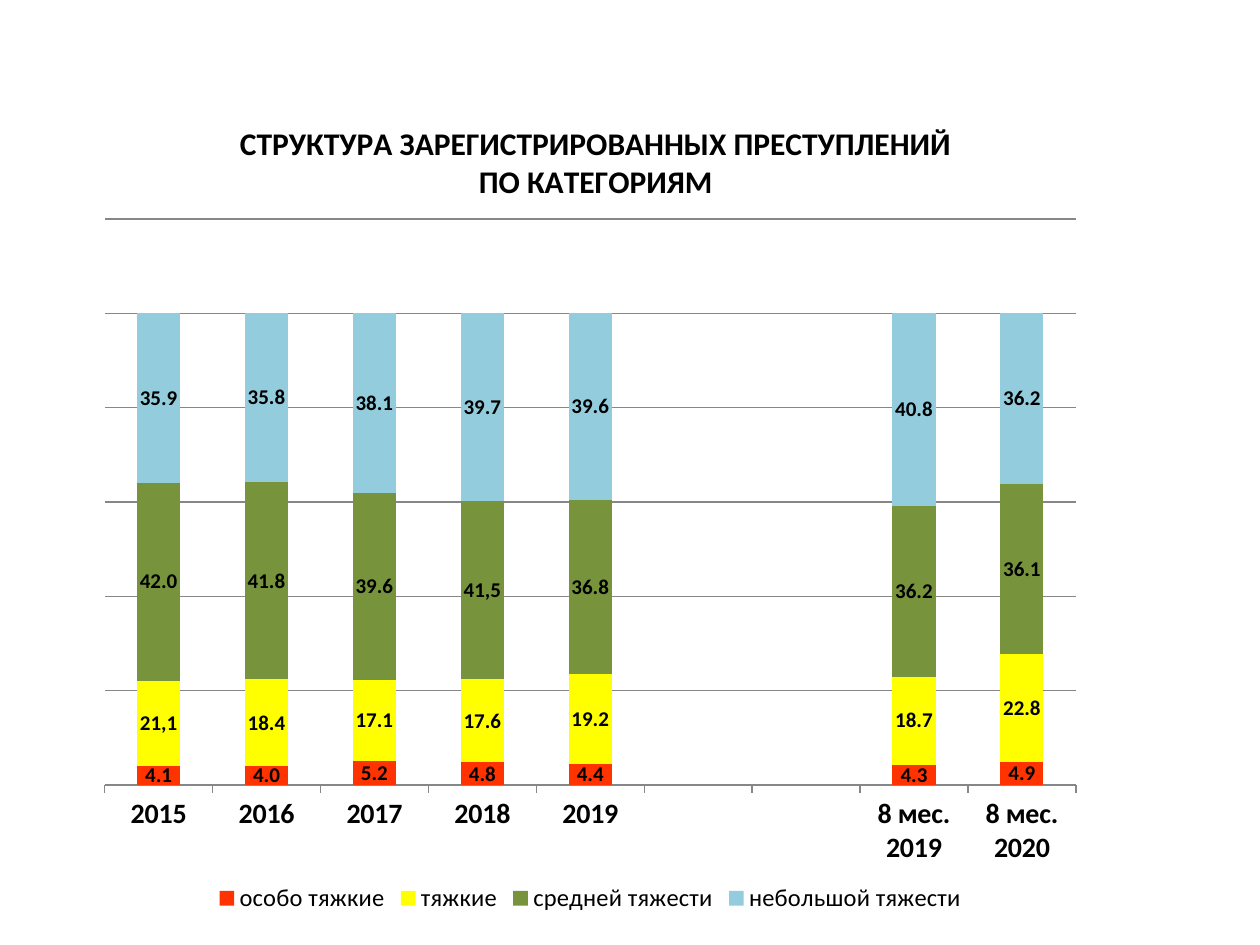
from lxml.etree import SubElement
from pptx import Presentation
from pptx.chart.data import CategoryChartData
from pptx.dml.color import RGBColor
from pptx.enum.chart import XL_CHART_TYPE as ChartType, XL_LABEL_POSITION as LabelPosition
from pptx.enum.chart import XL_LEGEND_POSITION as LegendPosition, XL_TICK_MARK as TickMark
from pptx.oxml.ns import qn
from pptx.util import Inches, Pt

FONT = "Calibri"
COLORS = {
    "text": "000000",
    "grid": "878787",
    "особо тяжкие": "FF3300",
    "тяжкие": "FFFF00",
    "средней тяжести": "77933C",
    "небольшой тяжести": "93CDDD",
}
TITLE = "СТРУКТУРА ЗАРЕГИСТРИРОВАННЫХ ПРЕСТУПЛЕНИЙ\nПО КАТЕГОРИЯМ"
PERIODS = ["2015", "2016", "2017", "2018", "2019", "", "", "8 мес. 2019", "8 мес. 2020"]
SHARES = {
    "особо тяжкие": [4.1, 4.0, 5.2, 4.8, 4.4, None, None, 4.3, 4.9],
    "тяжкие": [18.0, 18.4, 17.1, 17.6, 19.2, None, None, 18.7, 22.8],
    "средней тяжести": [42.0, 41.8, 39.6, 37.9, 36.8, None, None, 36.2, 36.1],
    "небольшой тяжести": [35.9, 35.8, 38.1, 39.7, 39.6, None, None, 40.8, 36.2],
}
CUSTOM_LABELS = {"тяжкие": (0, "21,1"), "средней тяжести": (3, "41,5")}


def color(name):
    """Return the named colour."""
    return RGBColor.from_string(COLORS[name])


def style_font(font, size, bold=False):
    """Apply the chart's typeface at a given size and weight."""
    font.name, font.size, font.bold = FONT, Pt(size), bold
    font.color.rgb = color("text")


def set_layout(parent, index, **settings):
    """Give a chart part a manual layout in shares of the chart."""
    for old in parent.findall(qn("c:layout")):
        parent.remove(old)
    layout = SubElement(parent, qn("c:layout"))
    manual = SubElement(layout, qn("c:manualLayout"))
    for tag, value in settings.items():
        SubElement(manual, qn(f"c:{tag}")).set("val", str(value))
    parent.insert(index, layout)


def add_title(chart):
    """Write the two-line heading above the columns."""
    title = chart.chart_title
    title.text_frame.text = TITLE
    for para in title.text_frame.paragraphs:
        style_font(para.font, 18, True)
        for span in para.runs:
            style_font(span.font, 18, True)
    set_layout(title._element, 1, xMode="edge", yMode="edge", x=0.15, y=0.04)


def style_axes(chart):
    """Format the period axis and hide the value axis behind its grid."""
    periods, values = chart.category_axis, chart.value_axis
    periods.major_tick_mark = TickMark.OUTSIDE
    style_font(periods.tick_labels.font, 16, True)
    values.visible = False
    values.minimum_scale, values.maximum_scale, values.major_unit = 0, 120, 20
    values.has_major_gridlines = True
    for line in (periods.format.line, values.major_gridlines.format.line):
        line.color.rgb = color("grid")
        line.width = Pt(0.75)


def style_series(series):
    """Colour one category of crime and label its shares."""
    series.format.fill.solid()
    series.format.fill.fore_color.rgb = color(series.name)
    labels = series.data_labels
    labels.show_value = True
    labels.number_format, labels.number_format_is_linked = "0.0", False
    labels.position = LabelPosition.CENTER
    style_font(labels.font, 12, True)
    if series.name in CUSTOM_LABELS:
        index, text = CUSTOM_LABELS[series.name]
        label = series.points[index].data_label
        label.text_frame.text = text
        style_font(label.text_frame.paragraphs[0].runs[0].font, 12, True)
        label.position = LabelPosition.CENTER


def add_crime_chart(page, box):
    """Place the stacked chart of crime categories in the box."""
    data = CategoryChartData(number_format="0.0")
    data.categories = PERIODS
    for name, shares in SHARES.items():
        data.add_series(name, shares)
    chart = page.shapes.add_chart(ChartType.COLUMN_STACKED, *box, data).chart
    style_font(chart.font, 18)
    add_title(chart)
    style_axes(chart)
    plot = chart.plots[0]
    plot.gap_width, plot.overlap, plot.vary_by_categories = 150, 100, False
    for series in plot.series:
        style_series(series)
    chart.has_legend = True
    chart.legend.position = LegendPosition.BOTTOM
    chart.legend.include_in_layout = False
    style_font(chart.legend.font, 14)
    area = chart._chartSpace.chart.plotArea
    set_layout(area, 0, layoutTarget="inner", xMode="edge", yMode="edge",
               x=0.02, y=0.16, w=0.96, h=0.68)


def main():
    """Build and save the slide."""
    deck = Presentation()
    deck.slide_width, deck.slide_height = Inches(10), Inches(7.5)
    page = deck.slides.add_slide(deck.slide_layouts[6])
    add_crime_chart(page, [Inches(size) for size in (0.67, 0.68, 8.03, 6.61)])
    deck.save("out.pptx")


if __name__ == "__main__":
    main()
